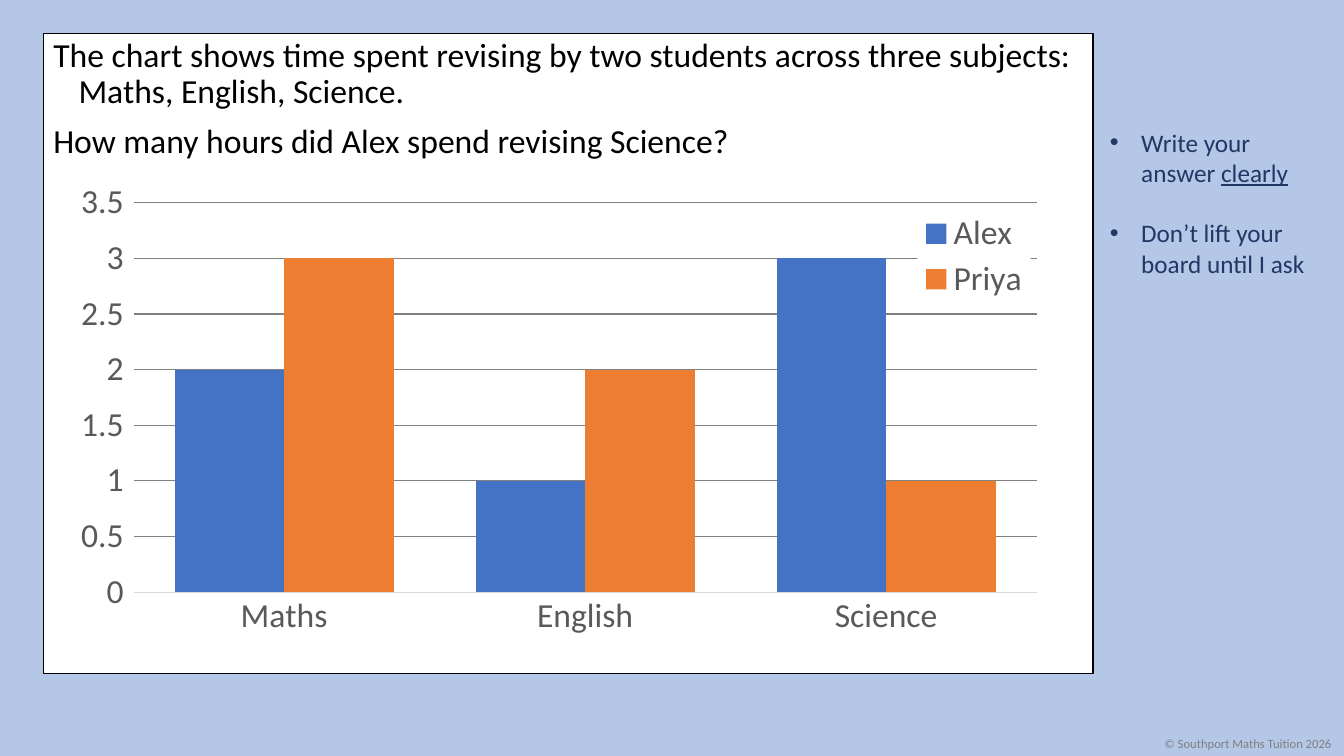
from dataclasses import dataclass
from lxml import etree
from pptx import Presentation
from pptx.chart.data import CategoryChartData
from pptx.dml.color import RGBColor
from pptx.enum.chart import XL_CHART_TYPE as ChartType, XL_LEGEND_POSITION as LegendPos, XL_TICK_MARK as Tick
from pptx.enum.shapes import MSO_SHAPE as Shape
from pptx.enum.text import MSO_ANCHOR as Anchor, PP_ALIGN as Align
from pptx.oxml import parse_xml
from pptx.oxml.ns import nsdecls, qn
from pptx.util import Inches, Pt

QUESTION = [
    "The chart shows time spent revising by two students across three subjects: Maths, English, Science.",
    "How many hours did Alex spend revising Science?",
]
REMINDERS = [[("Write your answer ", False), ("clearly", True)],
             [("Don’t lift your board until I ask", False)]]
CREDIT = "© Southport Maths Tuition 2026"
SUBJECTS = ["Maths", "English", "Science"]
HOURS = {"Alex": (2, 1, 3), "Priya": (3, 2, 1)}

SIZE = (13.33, 7.5)
AREAS = {
    "panel": (3.23, 4.4, 78.09, 84.67),
    "reminders": (81.85, 16.13, 17.4, 21.6),
    "credit": (85.9, 96.67, 14.1, 3.33),
    "chart": (4.35, 23.6, 74.57, 63.07),
}
PLOT = (7.5, 5.1, 90.1, 81.7)
LEGEND = (85.7, 6.4, 11.3, 20)


@dataclass(frozen=True)
class Theme:
    font: str = "Calibri"
    background: str = "B4C7E7"
    panel: str = "FFFFFF"
    ink: str = "000000"
    navy: str = "203864"
    grey: str = "808080"
    label: str = "595959"
    axis: str = "D9D9D9"
    bars: tuple = ("4472C4", "ED7D31")
    body: int = 24
    note: int = 18
    small: int = 9


THEME = Theme()


def rgb(value):
    return RGBColor.from_string(value)


def place(name):
    return [Inches(SIZE[i % 2] * share / 100) for i, share in enumerate(AREAS[name])]


def style(font, size, color):
    font.name, font.size = THEME.font, Pt(size)
    font.color.rgb = rgb(color)


def hang(p, indent, bullet=None):
    pPr = p._p.get_or_add_pPr()
    pPr.set("marL", str(Inches(indent)))
    pPr.set("indent", str(-Inches(indent)))
    if bullet:
        etree.SubElement(pPr, qn("a:buFont")).set("typeface", "Arial")
        etree.SubElement(pPr, qn("a:buChar")).set("char", bullet)


def layout_xml(box, inner=False):
    target = '<c:layoutTarget val="inner"/>' if inner else ""
    modes = "".join(f'<c:{k}Mode val="edge"/>' for k in "xy")
    values = "".join(f'<c:{k} val="{v / 100:.3f}"/>' for k, v in zip("xywh", box))
    return parse_xml(f'<c:layout {nsdecls("c")}><c:manualLayout>{target}{modes}{values}'
                     '</c:manualLayout></c:layout>')


def add_panel(slide):
    sp = slide.shapes.add_shape(Shape.RECTANGLE, *place("panel"))
    sp.shadow.inherit = False
    sp.fill.solid()
    sp.fill.fore_color.rgb = rgb(THEME.panel)
    sp.line.color.rgb = rgb(THEME.ink)
    sp.line.width = Pt(1)
    tf = sp.text_frame
    tf.word_wrap = True
    tf.vertical_anchor = Anchor.TOP
    tf.text = "\n".join(QUESTION)
    for i, p in enumerate(tf.paragraphs):
        hang(p, 0.25)
        p.alignment = Align.LEFT
        p.line_spacing = 0.9
        p.space_before = Pt(10 if i else 0)
        style(p.runs[0].font, THEME.body, THEME.ink)


def add_reminders(slide):
    tf = slide.shapes.add_textbox(*place("reminders")).text_frame
    tf.word_wrap = True
    for i, parts in enumerate(REMINDERS):
        p = tf.add_paragraph() if i else tf.paragraphs[0]
        hang(p, 0.31, "•")
        if i:
            p.space_before = Pt(THEME.note * 1.2)
        for text, underlined in parts:
            r = p.add_run()
            r.text = text
            style(r.font, THEME.note, THEME.navy)
            r.font.underline = underlined


def add_credit(slide):
    tf = slide.shapes.add_textbox(*place("credit")).text_frame
    tf.word_wrap = False
    tf.text = CREDIT
    style(tf.paragraphs[0].runs[0].font, THEME.small, THEME.grey)


def add_hours_chart(slide):
    data = CategoryChartData()
    data.categories = SUBJECTS
    for name, hours in HOURS.items():
        data.add_series(name, hours)
    chart = slide.shapes.add_chart(ChartType.COLUMN_CLUSTERED, *place("chart"), data).chart
    style(chart.font, THEME.body, THEME.label)
    chart.has_title = False

    plot = chart.plots[0]
    plot.gap_width, plot.overlap = 75, 0
    plot.vary_by_categories = False
    for series, color in zip(plot.series, THEME.bars):
        series.format.fill.solid()
        series.format.fill.fore_color.rgb = rgb(color)

    cat, val = chart.category_axis, chart.value_axis
    cat.major_tick_mark = Tick.NONE
    val.major_tick_mark = Tick.OUTSIDE
    val.minimum_scale, val.maximum_scale, val.major_unit = 0, 3.5, 0.5
    val.format.line.fill.background()
    for line, color in ((cat.format.line, THEME.axis), (val.major_gridlines.format.line, THEME.grey)):
        line.color.rgb = rgb(color)
        line.width = Pt(0.75)
    for axis in (cat, val):
        style(axis.tick_labels.font, THEME.body, THEME.label)

    chart.has_legend = True
    legend = chart.legend
    legend.position = LegendPos.RIGHT
    legend.include_in_layout = True
    style(legend.font, THEME.body, THEME.label)
    element = legend._element
    area = element.getparent().find(qn("c:plotArea"))
    for parent, box, inner in ((area, PLOT, True), (element, LEGEND, False)):
        for old in parent.findall(qn("c:layout")):
            parent.remove(old)
        index = 0 if inner else 1
        parent.insert(index, layout_xml(box, inner))
    element.find(qn("c:overlay")).addnext(parse_xml(
        f'<c:spPr {nsdecls("c", "a")}><a:solidFill><a:srgbClr val="{THEME.panel}"/>'
        '</a:solidFill></c:spPr>'))


def main():
    prs = Presentation()
    prs.slide_width, prs.slide_height = map(Inches, SIZE)
    slide = prs.slides.add_slide(prs.slide_layouts[6])
    slide.background.fill.solid()
    slide.background.fill.fore_color.rgb = rgb(THEME.background)
    add_panel(slide)
    add_reminders(slide)
    add_credit(slide)
    add_hours_chart(slide)
    prs.save("out.pptx")


if __name__ == "__main__":
    main()
